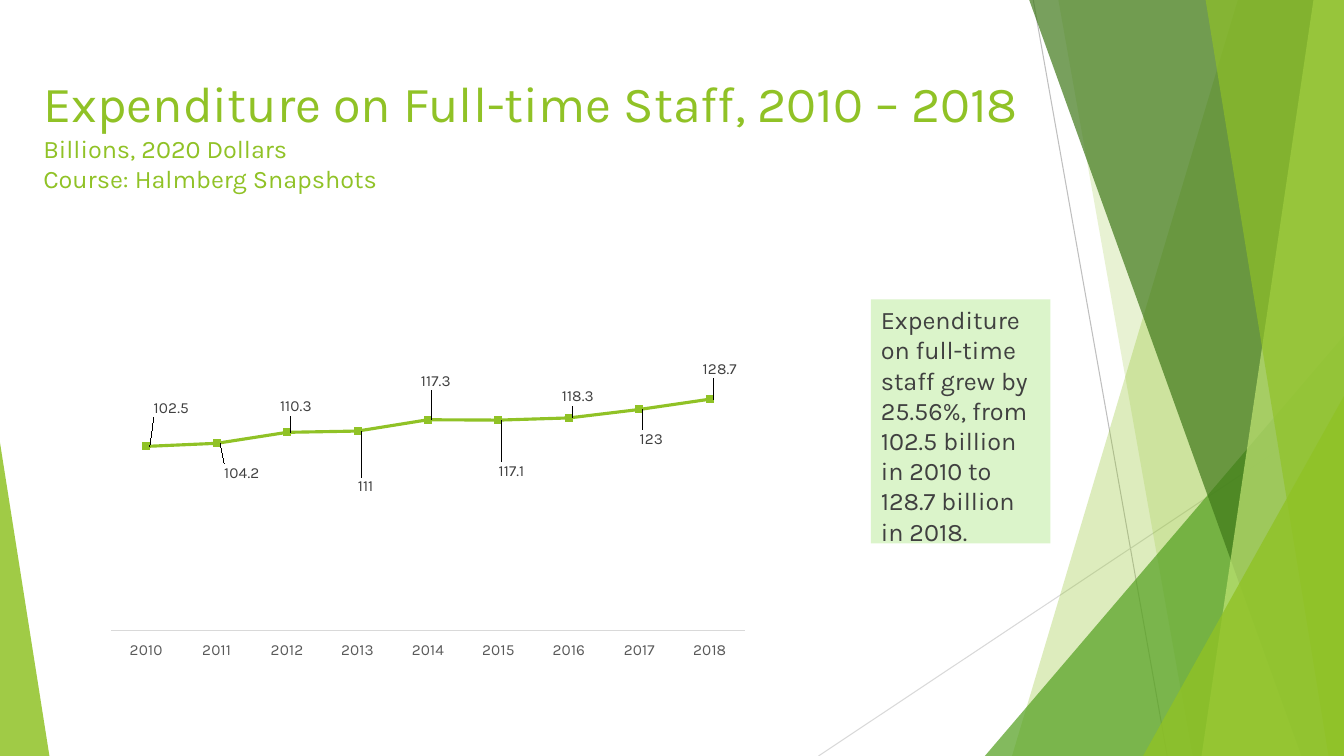
"""Build the slide on full-time staff expenditure, measured on a grid of 100 columns by 100 rows."""
from dataclasses import dataclass

from lxml.etree import SubElement
from pptx import Presentation
from pptx.chart.data import CategoryChartData
from pptx.dml.color import RGBColor
from pptx.enum.chart import XL_CHART_TYPE as ChartType, XL_LABEL_POSITION as LabelPosition
from pptx.enum.chart import XL_TICK_LABEL_POSITION as TickLabels, XL_TICK_MARK as TickMark
from pptx.enum.shapes import MSO_CONNECTOR as Connector, MSO_SHAPE as Preset
from pptx.enum.text import MSO_ANCHOR as Anchor, PP_ALIGN as Align
from pptx.oxml import parse_xml
from pptx.oxml.ns import nsdecls, qn
from pptx.util import Emu, Inches, Pt

WIDTH, HEIGHT = Inches(13.33), Inches(7.5)
FONT = "Karla"
LIME = RGBColor(0x90, 0xC2, 0x26)
GREEN = RGBColor(0x54, 0xA0, 0x21)
FOREST = RGBColor(0x3F, 0x78, 0x19)
PALE_LIME = RGBColor(0xC0, 0xE4, 0x74)
MINT = RGBColor(0xDB, 0xF4, 0xCA)
INK = RGBColor(0x40, 0x40, 0x40)
AXIS_INK = RGBColor(0x59, 0x59, 0x59)
SILVER = RGBColor(0xBF, 0xBF, 0xBF)
MIST = RGBColor(0xD9, 0xD9, 0xD9)


@dataclass(frozen=True)
class Box:
    left: float
    top: float
    width: float
    height: float

    def frame(self) -> tuple:
        return columns(self.left), rows(self.top), columns(self.width), rows(self.height)


@dataclass(frozen=True)
class Ray:
    start: tuple
    end: tuple
    color: RGBColor


@dataclass(frozen=True)
class Band:
    """A full-height facet between a slanted edge and the right side."""
    top_column: float
    bottom_column: float
    color: RGBColor
    opacity: int


@dataclass(frozen=True)
class Wedge:
    box: Box
    apex: float
    color: RGBColor
    opacity: int


@dataclass(frozen=True)
class Reading:
    year: str
    billions: float
    label_shift: tuple


RAYS = [Ray((76.88, 0), (86.85, 100), SILVER), Ray((100, 53.73), (60.9, 100), MIST)]
FACETS = [
    Band(92.1, 75.3, LIME, 30),
    Band(78.75, 88.73, LIME, 20),
    Wedge(Box(73.28, 44.4, 26.72, 55.6), 1, GREEN, 72),
    Band(76.58, 96.83, FOREST, 70),
    Band(97.73, 89.4, PALE_LIME, 70),
    Band(89.7, 98.85, LIME, 65),
    Wedge(Box(85.05, 52.4, 14.95, 47.6), 1, LIME, 80),
    Wedge(Box(0, 58.53, 3.68, 41.47), 0, LIME, 85),
]
READINGS = [
    Reading("2010", 102.5, (0, -0.09)),
    Reading("2011", 104.2, (0, 0.07)),
    Reading("2012", 110.3, (-0.02, -0.06)),
    Reading("2013", 111, (-0.01, 0.13)),
    Reading("2014", 117.3, (-0.02, -0.09)),
    Reading("2015", 117.1, (-0.01, 0.12)),
    Reading("2016", 118.3, (-0.02, -0.05)),
    Reading("2017", 123, (-0.01, 0.07)),
    Reading("2018", 128.7, (-0.02, -0.07)),
]
TITLE_BOX = Box(2.48, 8.93, 77.03, 19.2)
NOTE_BOX = Box(64.8, 39.6, 13.35, 32.27)
CHART_BOX = Box(5.55, 31.47, 54.23, 56.53)


def columns(count: float) -> Emu:
    return Emu(round(WIDTH * count / 100))


def rows(count: float) -> Emu:
    return Emu(round(HEIGHT * count / 100))


def style_font(font, size: float, color: RGBColor) -> None:
    font.name, font.size = FONT, Pt(size)
    font.color.rgb = color


def paint(shape, color: RGBColor, opacity: int = 100) -> None:
    shape.shadow.inherit = False
    shape.line.fill.background()
    shape.fill.solid()
    shape.fill.fore_color.rgb = color
    if opacity < 100:
        solid_color = shape.fill._xPr.find(qn("a:solidFill"))[0]
        SubElement(solid_color, qn("a:alpha")).set("val", str(opacity * 1000))


def draw_ray(slide, ray: Ray) -> None:
    (x1, y1), (x2, y2) = ray.start, ray.end
    line = slide.shapes.add_connector(Connector.STRAIGHT, columns(x1), rows(y1), columns(x2), rows(y2))
    line.line.color.rgb, line.line.width = ray.color, Pt(0.75)
    SubElement(line._element.spPr, qn("a:effectLst"))


def draw_facet(slide, facet: Band | Wedge) -> None:
    if isinstance(facet, Band):
        outline = slide.shapes.build_freeform(columns(facet.top_column), 0)
        corners = [(100, 0), (100, 100), (facet.bottom_column, 100)]
        outline.add_line_segments([(columns(x), rows(y)) for x, y in corners])
        shape = outline.convert_to_shape()
    else:
        shape = slide.shapes.add_shape(Preset.ISOSCELES_TRIANGLE, *facet.box.frame())
        shape.adjustments[0] = facet.apex
    paint(shape, facet.color, facet.opacity)


def write(shape, lines: list, *, color: RGBColor, space_before: float = 0) -> None:
    frame = shape.text_frame
    frame.word_wrap, frame.vertical_anchor = True, Anchor.TOP
    paragraph = frame.paragraphs[0]
    paragraph.alignment, paragraph.space_before = Align.LEFT, Pt(space_before)
    for index, (text, size) in enumerate(lines):
        if index:
            paragraph.add_line_break()
        run = paragraph.add_run()
        run.text = text
        style_font(run.font, size, color)


def layout_xml(x: float, y: float, extra: str = "", size: str = ""):
    return parse_xml(
        f'<c:layout {nsdecls("c")}><c:manualLayout>{extra}'
        f'<c:x val="{x}"/><c:y val="{y}"/>{size}</c:manualLayout></c:layout>')


def draw_chart(slide, readings: list, box: Box) -> None:
    data = CategoryChartData()
    data.categories = [reading.year for reading in readings]
    data.add_series("Series 1", [reading.billions for reading in readings])
    chart = slide.shapes.add_chart(ChartType.LINE, *box.frame(), data).chart
    chart.has_legend = chart.has_title = False
    style_font(chart.font, 10, RGBColor(0, 0, 0))

    values, years = chart.value_axis, chart.category_axis
    values.minimum_scale, values.maximum_scale = 0, 140
    values.has_major_gridlines = values.visible = False
    years.major_tick_mark = years.minor_tick_mark = TickMark.NONE
    years.tick_label_position = TickLabels.LOW
    years.format.line.color.rgb, years.format.line.width = MIST, Pt(0.75)
    style_font(years.tick_labels.font, 11, AXIS_INK)

    chart.plots[0].vary_by_categories = False
    series = chart.plots[0].series[0]
    series.smooth = False
    series.marker.style = None
    series.format.line.color.rgb, series.format.line.width = LIME, Pt(2.25)
    for index in range(len(readings)):
        label = series.points[index].data_label
        label.position = LabelPosition.RIGHT
        style_font(label.font, 11, INK)
    for element, reading in zip(series._element.iter(qn("c:dLbl")), readings):
        element.insert(1, layout_xml(*reading.label_shift))

    plot_area = chart._chartSpace.chart.plotArea
    for layout in plot_area.findall(qn("c:layout")):
        plot_area.remove(layout)
    inner = '<c:layoutTarget val="inner"/><c:xMode val="edge"/><c:yMode val="edge"/>'
    plot_area.insert(0, layout_xml(0.05, 0.33, inner, '<c:w val="0.87"/><c:h val="0.59"/>'))


def main() -> None:
    presentation = Presentation()
    presentation.slide_width, presentation.slide_height = WIDTH, HEIGHT
    slide = presentation.slides.add_slide(presentation.slide_layouts[6])
    for ray in RAYS:
        draw_ray(slide, ray)
    for facet in FACETS:
        draw_facet(slide, facet)
    title = slide.shapes.add_textbox(*TITLE_BOX.frame())
    write(title, [("Expenditure on Full-time Staff, 2010 – 2018", 36), ("Billions, 2020 Dollars", 18),
                  ("Course: Halmberg Snapshots", 18)], color=LIME)
    note = slide.shapes.add_shape(Preset.RECTANGLE, *NOTE_BOX.frame())
    paint(note, MINT)
    write(note, [("Expenditure on full-time staff grew by 25.56%, from 102.5 billion in 2010 "
                  "to 128.7 billion in 2018.", 18)], color=INK, space_before=10)
    draw_chart(slide, READINGS, CHART_BOX)
    presentation.save("out.pptx")


if __name__ == "__main__":
    main()
